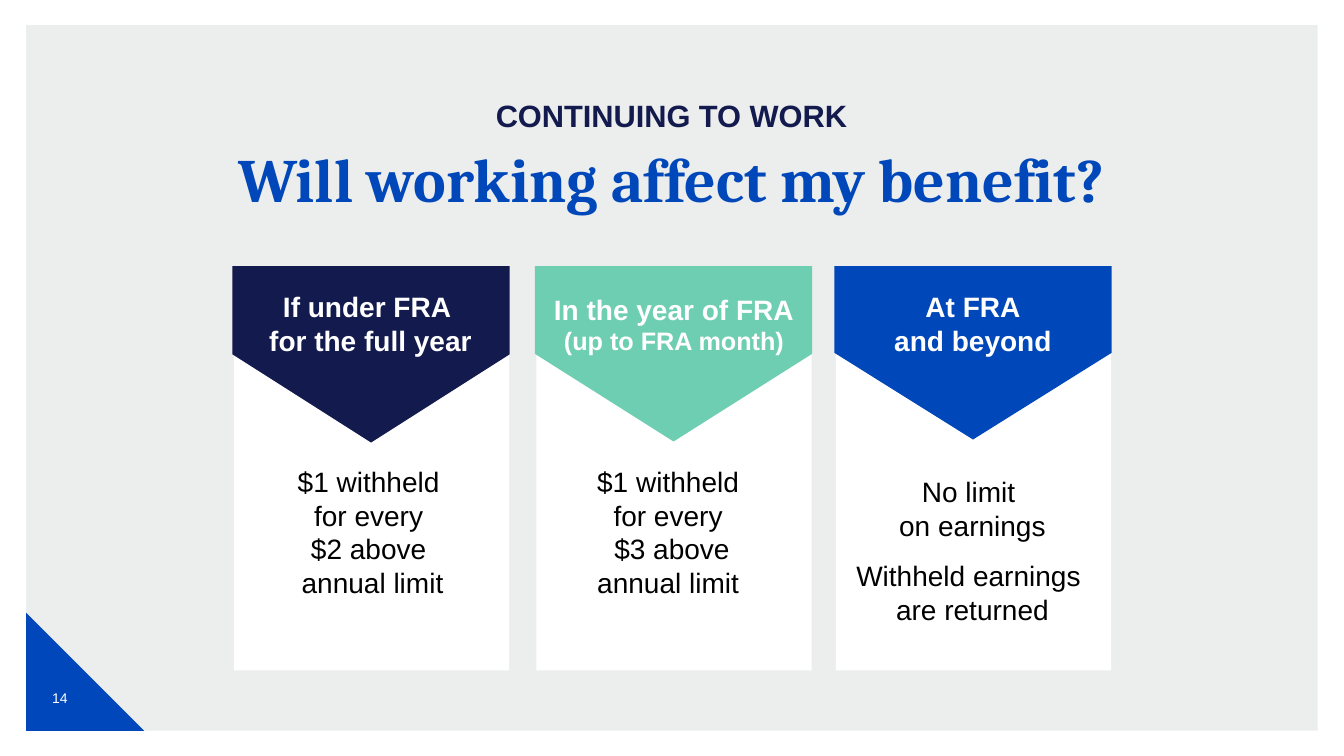
from lxml import etree
from pptx import Presentation
from pptx import util as u
from pptx.dml.color import RGBColor
from pptx.enum import shapes, text
from pptx.oxml import ns

PX = 9144  # EMU per px, 100 px to the inch
COLORS = {
    "white": "FFFFFF",
    "black": "000000",
    "gray": "D0D3D4",
    "navy": "131A4D",
    "mint": "6ECEB1",
    "blue": "0047BA",
    "corner": "0047BB",
}
CARD_TOP, CARD_WIDTH, CARD_HEIGHT = 264, 273, 401
BANNER_WIDTH = 275
BODY_TOP, BODY_HEIGHT = 461, 204


def color(name):
    return RGBColor.from_string(COLORS[name])


def add_block(slide, kind, box, fill, opacity=None):
    shape = slide.shapes.add_shape(kind, *(round(v * PX) for v in box))
    shape.shadow.inherit = False
    shape.fill.solid()
    shape.fill.fore_color.rgb = color(fill)
    shape.line.fill.background()
    if opacity is not None:
        tint = shape.fill._xPr.find(".//" + ns.qn("a:srgbClr"))
        etree.SubElement(tint, ns.qn("a:alpha"), val=str(opacity * 1000))
    return shape


def add_text(slide, box, paragraphs, fill, bold=False, font="Arial",
             insets=(10, 5), middle=False, before=0, after=0, spacing=None):
    """Each paragraph is a (wording, point size) pair; a newline breaks a line."""
    shape = slide.shapes.add_textbox(*(v * PX for v in box))
    frame = shape.text_frame
    frame.word_wrap = True
    frame.margin_left = frame.margin_right = insets[0] * PX
    frame.margin_top = frame.margin_bottom = insets[1] * PX
    frame.vertical_anchor = text.MSO_ANCHOR.MIDDLE if middle else text.MSO_ANCHOR.TOP
    for index, (wording, size) in enumerate(paragraphs):
        paragraph = frame.add_paragraph() if index else frame.paragraphs[0]
        paragraph.alignment = text.PP_ALIGN.CENTER
        paragraph.space_before = u.Pt(before)
        paragraph.space_after = u.Pt(after)
        if spacing:
            paragraph.line_spacing = spacing
        for number, line in enumerate(wording.split("\n")):
            if number:
                paragraph.add_line_break()
            run = paragraph.add_run()
            run.text = line
            run.font.name = font
            run.font.size = u.Pt(size)
            run.font.bold = bold
            run.font.color.rgb = color(fill)


def add_banner(slide, center, top, depth, fill):
    """Pentagon turned to point downwards."""
    middle = top + depth / 2
    box = (center - depth / 2, middle - BANNER_WIDTH / 2, depth, BANNER_WIDTH)
    add_block(slide, shapes.MSO_SHAPE.PENTAGON, box, fill).rotation = 90


def add_card(slide, left, banner, heading_box, heading, body_left, body, **body_style):
    add_block(slide, shapes.MSO_SHAPE.RECTANGLE,
              (left, CARD_TOP, CARD_WIDTH, CARD_HEIGHT), "white")
    add_text(slide, (body_left, BODY_TOP, BANNER_WIDTH, BODY_HEIGHT),
             body, "black", **body_style)
    add_banner(slide, *banner)
    add_text(slide, heading_box, heading, "white", bold=True, middle=True)


def main():
    presentation = Presentation()
    presentation.slide_width = 1333 * PX
    presentation.slide_height = 750 * PX
    slide = presentation.slides.add_slide(presentation.slide_layouts[6])

    # Backdrop, corner and slide number
    add_block(slide, shapes.MSO_SHAPE.RECTANGLE, (26, 25, 1281, 700), "gray", opacity=40)
    add_block(slide, shapes.MSO_SHAPE.RIGHT_TRIANGLE, (26, 608, 117, 117), "corner")
    add_text(slide, (32, 663, 55, 58), [("14", 10)], "white", middle=True)

    # Cards
    add_card(slide, 232, (368, 264, 175, "navy"), (232, 293, 271, 55),
             [("If under FRA \nfor the full year", 20)],
             232, [("$1 withheld \nfor every \n$2 above \nannual limit", 20)],
             insets=(0, 0))
    add_card(slide, 532, (668, 264, 174, "mint"), (531, 294, 275, 55),
             [("In the year of FRA", 20), ("(up to FRA month)", 18)],
             529, [("$1 withheld \nfor every \n$3 above\nannual limit ", 20)],
             insets=(0, 0))
    add_card(slide, 829, (965, 264, 172, "blue"), (840, 293, 250, 55),
             [("At FRA\nand beyond", 20)],
             827, [("No limit \non earnings", 20), ("Withheld earnings \nare returned", 20)],
             insets=(10, 10), after=12)

    # Titles
    add_text(slide, (163, 95, 1006, 50), [("CONTINUING TO WORK", 22)], "navy",
             bold=True, insets=(0, 5), before=10, spacing=0.9)
    add_text(slide, (163, 143, 1006, 65), [("Will working affect my benefit?", 44)], "blue",
             bold=True, font="Cambria", insets=(0, 5), spacing=0.9)

    presentation.save("out.pptx")


if __name__ == "__main__":
    main()
